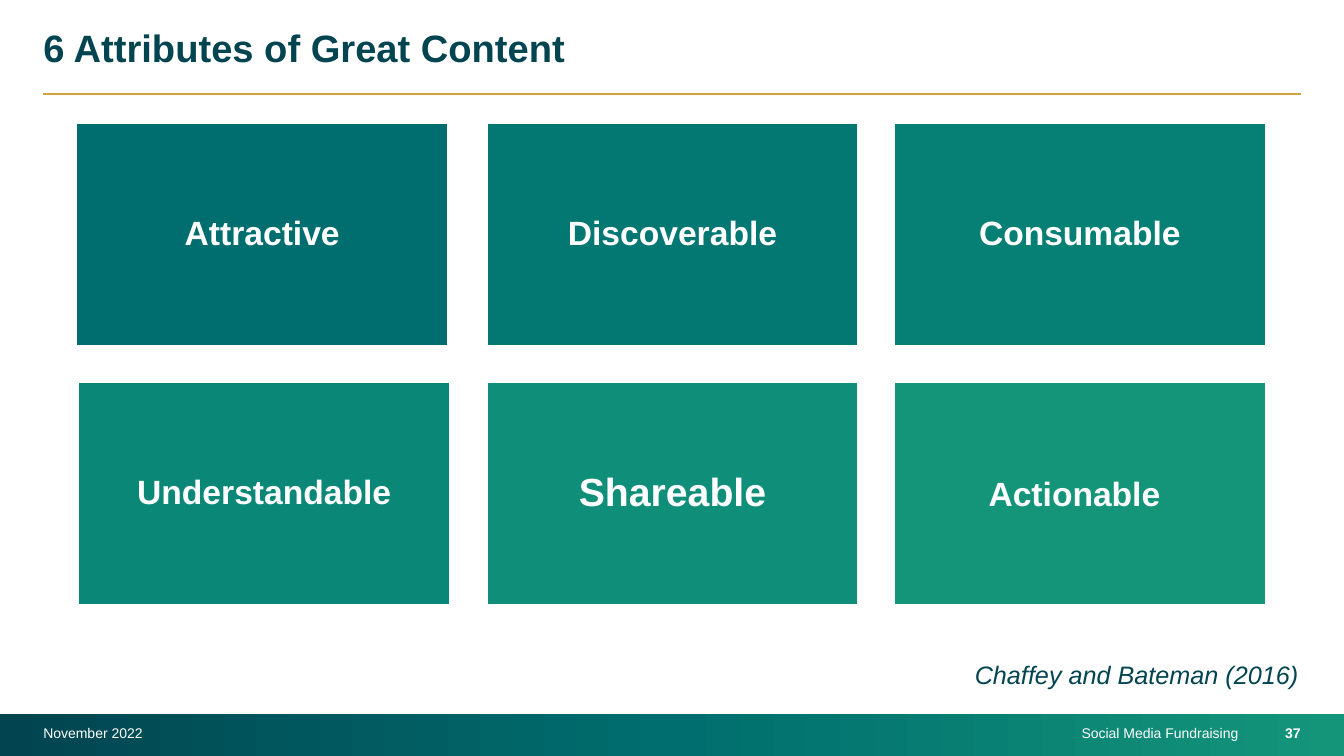
from copy import deepcopy
from dataclasses import dataclass

from pptx import Presentation
from pptx.dml.color import RGBColor
from pptx.enum.shapes import MSO_CONNECTOR, MSO_SHAPE
from pptx.enum.text import MSO_ANCHOR, PP_ALIGN
from pptx.oxml.ns import qn
from pptx.slide import Slide
from pptx.text.text import TextFrame, _Paragraph
from pptx.util import Inches, Pt
from lxml import etree

RECTANGLE = MSO_SHAPE.RECTANGLE
STRAIGHT = MSO_CONNECTOR.STRAIGHT
TOP, MIDDLE = MSO_ANCHOR.TOP, MSO_ANCHOR.MIDDLE
LEFT, CENTER, RIGHT = PP_ALIGN.LEFT, PP_ALIGN.CENTER, PP_ALIGN.RIGHT

FONT = "Arial"
WHITE = RGBColor(0xFF, 0xFF, 0xFF)
NAVY = RGBColor(0x02, 0x44, 0x50)
TEAL = RGBColor(0x00, 0x6E, 0x6E)
GREEN = RGBColor(0x14, 0x95, 0x7A)
GOLD = RGBColor(0xCD, 0xA5, 0x3C)

SLIDE_WIDTH, SLIDE_HEIGHT = 13.33, 7.5
MARGIN = 0.43
TILE_WIDTH, TILE_HEIGHT = 3.68, 2.21
COLUMNS = (0.78, 4.83, 8.87)
ROWS = (1.22, 3.79)


@dataclass(frozen=True)
class Attribute:
    word: str
    color: RGBColor
    size: float = 24
    inset: float = 0.1
    shift: float = 0
    trailing_space: bool = False


@dataclass(frozen=True)
class FooterItem:
    text: str
    left: float
    width: float
    align: PP_ALIGN
    bold: bool = False


ATTRIBUTES = (
    Attribute("Attractive", TEAL, shift=-0.02),
    Attribute("Discoverable", RGBColor(0x03, 0x77, 0x72)),
    Attribute("Consumable", RGBColor(0x06, 0x7F, 0x75)),
    Attribute("Understandable", RGBColor(0x0A, 0x87, 0x77)),
    Attribute("Shareable", RGBColor(0x0F, 0x8E, 0x79), size=28, inset=0.12),
    Attribute("Actionable", GREEN, trailing_space=True),
)
FOOTER_ITEMS = (
    FooterItem("November 2022", MARGIN, 5.36, LEFT),
    FooterItem("Social Media Fundraising", 6.03, 6.25, RIGHT),
    FooterItem("37", 12.37, 0.53, RIGHT, bold=True),
)


def set_frame(frame: TextFrame, inset: float, anchor: MSO_ANCHOR) -> None:
    frame.word_wrap = True
    frame.vertical_anchor = anchor
    frame.margin_left = frame.margin_right = Inches(inset)
    frame.margin_top = frame.margin_bottom = Inches(inset)


def add_run(paragraph: _Paragraph, text: str, size: float, color: RGBColor,
            bold: bool = False, italic: bool = False) -> None:
    run = paragraph.add_run()
    run.text = text
    run.font.name = FONT
    run.font.size = Pt(size)
    run.font.color.rgb = color
    run.font.bold = bold
    run.font.italic = italic


def add_footer_band(slide: Slide) -> None:
    band = slide.shapes.add_shape(RECTANGLE, 0, Inches(7.08),
                                  Inches(SLIDE_WIDTH), Inches(0.43))
    band.shadow.inherit = False
    band.line.fill.background()
    band.fill.gradient()
    band.fill.gradient_angle = 0
    # The default gradient has two stops; a third goes in the middle
    stop_list = band._element.spPr.find(".//" + qn("a:gsLst"))
    stop_list.insert(1, deepcopy(stop_list[0]))
    for stop, position, color in zip(band.fill.gradient_stops, (0, 0.5, 1),
                                     (NAVY, TEAL, GREEN)):
        stop.position = position
        stop.color.rgb = color


def add_footer_item(slide: Slide, item: FooterItem) -> None:
    box = slide.shapes.add_textbox(Inches(item.left), Inches(7.21),
                                   Inches(item.width), Inches(0.14))
    set_frame(box.text_frame, 0, TOP)
    paragraph = box.text_frame.paragraphs[0]
    paragraph.alignment = item.align
    paragraph.line_spacing = 0.9
    add_run(paragraph, item.text, 10, WHITE, bold=item.bold)


def add_title(slide: Slide, text: str) -> None:
    title = slide.shapes.title
    title.left, title.top = Inches(MARGIN), Inches(0.29)
    title.width, title.height = Inches(12.48), Inches(0.61)
    set_frame(title.text_frame, 0, TOP)
    paragraph = title.text_frame.paragraphs[0]
    paragraph.alignment = LEFT
    paragraph.line_spacing = 0.9
    add_run(paragraph, text, 27.2, NAVY, bold=True)


def add_title_rule(slide: Slide) -> None:
    rule = slide.shapes.add_connector(STRAIGHT, Inches(MARGIN), Inches(0.93),
                                      Inches(12.9), Inches(0.93))
    rule.line.color.rgb = GOLD
    rule.line.width = Pt(1.5)
    etree.SubElement(rule._element.spPr, qn("a:effectLst"))


def add_tile(slide: Slide, attribute: Attribute, left: float, top: float) -> None:
    tile = slide.shapes.add_shape(RECTANGLE, Inches(left + attribute.shift), Inches(top),
                                  Inches(TILE_WIDTH), Inches(TILE_HEIGHT))
    tile.shadow.inherit = False
    tile.fill.solid()
    tile.fill.fore_color.rgb = attribute.color
    tile.line.color.rgb = WHITE
    tile.line.width = Pt(1)
    set_frame(tile.text_frame, attribute.inset, MIDDLE)
    paragraph = tile.text_frame.paragraphs[0]
    paragraph.alignment = CENTER
    paragraph.line_spacing = 0.9
    add_run(paragraph, attribute.word, attribute.size, WHITE, bold=True)
    if attribute.trailing_space:
        add_run(paragraph, " ", 28, WHITE)


def add_citation(slide: Slide, text: str) -> None:
    box = slide.shapes.add_textbox(Inches(9.57), Inches(6.49), Inches(3.6), Inches(0.4))
    box.text_frame.word_wrap = True
    add_run(box.text_frame.paragraphs[0], text, 18, NAVY, italic=True)


def main() -> None:
    presentation = Presentation()
    presentation.slide_width = Inches(SLIDE_WIDTH)
    presentation.slide_height = Inches(SLIDE_HEIGHT)
    slide = presentation.slides.add_slide(presentation.slide_layouts[5])

    # Footer
    add_footer_band(slide)
    for item in FOOTER_ITEMS:
        add_footer_item(slide, item)

    # Heading
    add_title(slide, "6 Attributes of Great Content")
    add_title_rule(slide)

    # Grid of attributes
    for index, attribute in enumerate(ATTRIBUTES):
        row, column = divmod(index, len(COLUMNS))
        add_tile(slide, attribute, COLUMNS[column], ROWS[row])

    # Source
    add_citation(slide, "Chaffey and Bateman (2016)")

    presentation.save("out.pptx")


if __name__ == "__main__":
    main()
